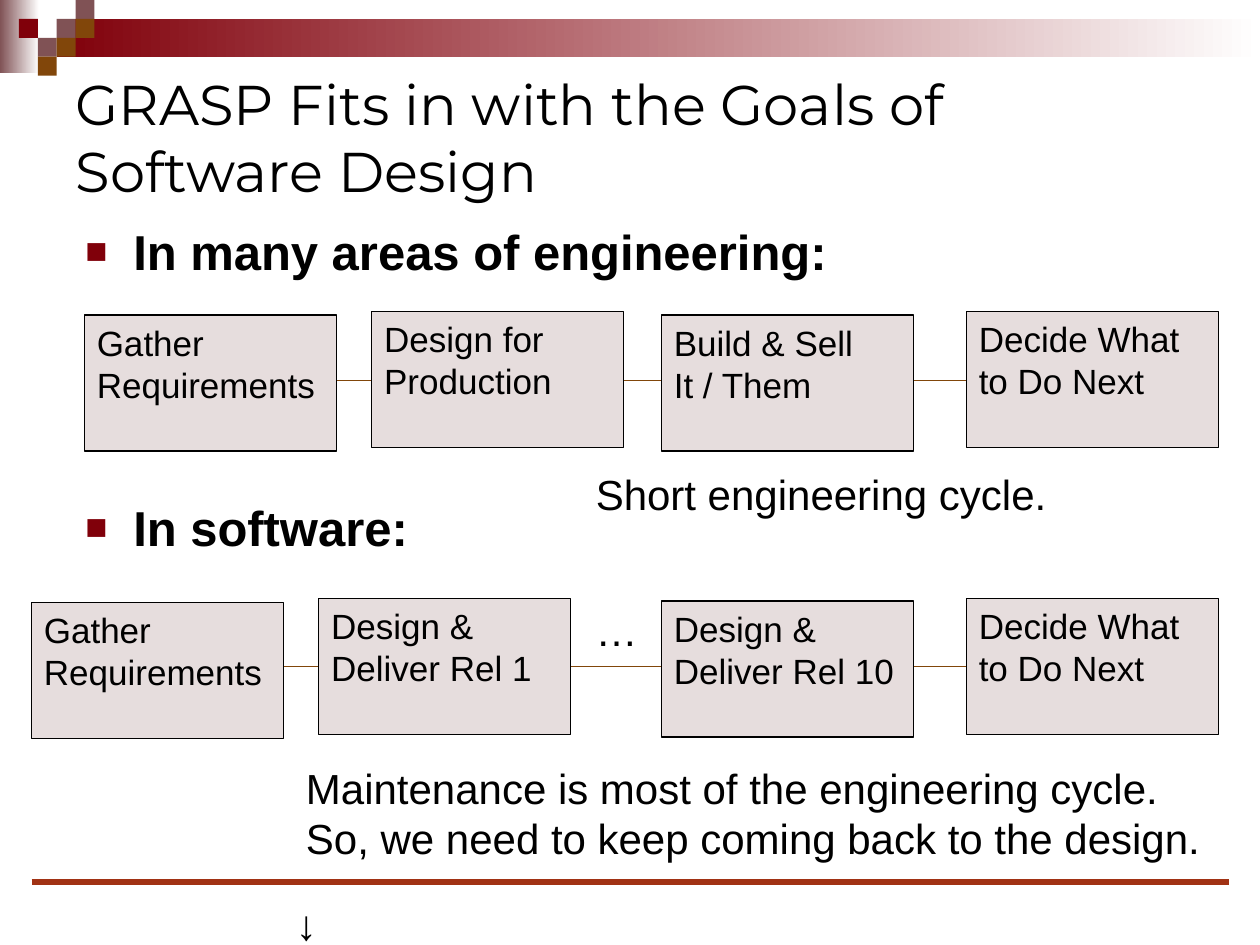
from lxml import etree
from pptx import Presentation
from pptx.dml.color import RGBColor as RGB
from pptx.enum.shapes import MSO_CONNECTOR as LINE, MSO_SHAPE as SHAPE
from pptx.enum.text import MSO_ANCHOR as ANCHOR, PP_ALIGN as ALIGN
from pptx.oxml.ns import qn
from pptx.util import Inches, Pt

HEX = {"red": "80000A", "mauve": "805255", "brown": "81460A", "rust": "A13214",
       "box": "E6DDDD", "black": "000000", "white": "FFFFFF"}
INK = {name: RGB.from_string(code) for name, code in HEX.items()}

deck = Presentation()
deck.slide_width, deck.slide_height = Inches(10), Inches(7.5)
slide = deck.slides.add_slide(deck.slide_layouts[5])
shapes = slide.shapes


def add_rect(x, y, w, h, color):
    rect = shapes.add_shape(SHAPE.RECTANGLE, Inches(x), Inches(y), Inches(w), Inches(h))
    rect.shadow.inherit = False
    rect.fill.solid()
    rect.fill.fore_color.rgb = INK[color]
    rect.line.fill.background()
    return rect


def set_font(frame, size, bold=False, name="Arial"):
    for para in frame.paragraphs:
        para.alignment = ALIGN.LEFT
        for run in para.runs:
            run.font.name, run.font.size, run.font.bold = name, Pt(size), bold
            run.font.color.rgb = INK["black"]


# Fading bands at the top
for x, y, w, h, color in [(0, 0, 0.31, 0.58, "mauve"), (0.45, 0.15, 9.55, 0.3, "red")]:
    band = add_rect(x, y, w, h, color)
    band.fill.gradient()
    band.fill.gradient_angle = 0
    for stop, tone, pos in zip(band.fill.gradient_stops, (color, "white"), (0, 1)):
        stop.color.rgb, stop.position = INK[tone], pos

# Corner mosaic: column, row on a 0.15 inch grid
TILE = 0.15
for col, row, color in [(3, 1, "mauve"), (4, 0, "mauve"), (4, 1, "brown"), (2, 2, "mauve"),
                        (1, 1, "red"), (3, 2, "brown"), (2, 3, "brown")]:
    add_rect(col * TILE, row * TILE, TILE, TILE, color)

# Footer rule and the lines that run behind the boxes
for x1, x2, y, color, width in [(0.25, 9.75, 7, "rust", 3), (1.67, 8.67, 3.02, "brown", 0.75),
                                (1.67, 8.67, 5.29, "brown", 0.75)]:
    rule = shapes.add_connector(LINE.STRAIGHT, Inches(x1), Inches(y), Inches(x2), Inches(y))
    rule.line.color.rgb, rule.line.width = INK[color], Pt(width)
    etree.SubElement(rule._element.spPr, qn("a:effectLst"))

# Title
title = shapes.title
title.left, title.top, title.width, title.height = map(Inches, (0.5, 0.75, 9, 0.67))
title.text_frame.text = "GRASP Fits in with the Goals of Software Design"
title.text_frame.vertical_anchor = ANCHOR.MIDDLE
set_font(title.text_frame, 32, name="Montserrat")

# Bulleted headings
body = shapes.add_textbox(Inches(0.58), Inches(1.71), Inches(9), Inches(5)).text_frame
body.word_wrap = True
body.text = "In many areas of engineering:\nIn software:"
for para in body.paragraphs:
    props = para._p.get_or_add_pPr()
    props.set("marL", str(Inches(0.38)))
    props.set("indent", str(-Inches(0.38)))
    tint = etree.SubElement(props, qn("a:buClr"))
    etree.SubElement(tint, qn("a:srgbClr"), val=HEX["red"])
    etree.SubElement(props, qn("a:buSzPct"), val="75000")
    etree.SubElement(props, qn("a:buFont"), typeface="Arial")
    etree.SubElement(props, qn("a:buChar"), char="■")
body.paragraphs[1].space_before = Pt(124)
set_font(body, 28, bold=True)

# Two rows of process steps
ROWS = [
    (2.47, [(0.67, 0.03, "Gather Requirements"), (2.95, 0, "Design for Production"),
            (5.25, 0.03, "Build & Sell\vIt / Them"), (7.67, 0, "Decide What to Do Next")]),
    (4.75, [(0.25, 0.03, "Gather Requirements"), (2.53, 0, "Design & Deliver Rel 1"),
            (5.25, 0.02, "Design & Deliver Rel 10"), (7.67, 0, "Decide What to Do Next")]),
]
for top, steps in ROWS:
    for x, drop, text in steps:
        step = add_rect(x, top + drop, 2, 1.08, "box")
        step.line.color.rgb, step.line.width = INK["black"], Pt(0.75)
        step.text_frame.text = text
        step.text_frame.word_wrap = True
        step.text_frame.vertical_anchor = ANCHOR.TOP
        set_font(step.text_frame, 20)

# Remarks
for x, y, w, h, text in [
        (4.63, 4.75, 0.54, 0.5, "…"),
        (4.63, 3.67, 3.82, 0.5, "Short engineering cycle."),
        (2.33, 6, 7.37, 0.91, "Maintenance is most of the engineering cycle.\n"
                              "So, we need to keep coming back to the design."),
        (2.25, 7.08, 0.41, 0.5, "↓")]:
    note = shapes.add_textbox(Inches(x), Inches(y), Inches(w), Inches(h)).text_frame
    note.word_wrap = False
    note.text = text
    set_font(note, 24)

deck.save("out.pptx")
